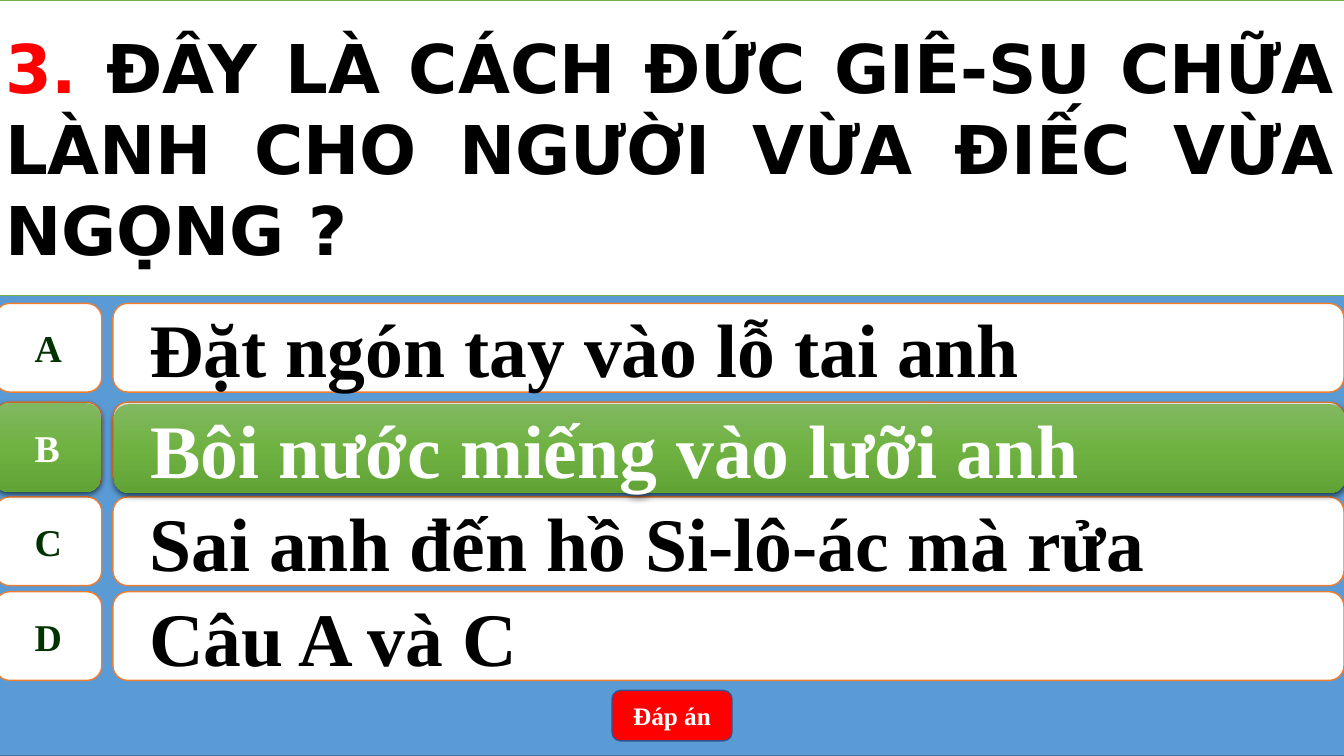
from lxml.etree import SubElement
from pptx import Presentation
from pptx.dml.color import RGBColor
from pptx.enum.shapes import MSO_SHAPE
from pptx.enum.text import MSO_ANCHOR, MSO_AUTO_SIZE, PP_ALIGN
from pptx.oxml.ns import qn
from pptx.util import Inches, Pt


def paint(shape, fill, line):
    shape.shadow.inherit = False
    if line:
        shape.fill.solid()
        shape.fill.fore_color.rgb = RGBColor.from_string(fill)
        shape.line.color.rgb = RGBColor.from_string(line)
        shape.line.width = Pt(1)
        return
    shape.line.fill.background()
    shape.fill.gradient()
    shape.fill.gradient_angle = 270
    properties = shape.element.spPr
    stops = properties.find(qn("a:gradFill")).find(qn("a:gsLst"))
    for stop in list(stops):
        stops.remove(stop)
    for position, color in zip((0, 50000, 100000), fill):
        stop = SubElement(stops, qn("a:gs"), pos=str(position))
        SubElement(stop, qn("a:srgbClr"), val=color)
    shadow = SubElement(properties.find(qn("a:effectLst")), qn("a:outerShdw"),
                        blurRad=str(Pt(4.5)), dist=str(Pt(1.5)), dir="5400000",
                        algn="ctr", rotWithShape="0")
    black = SubElement(shadow, qn("a:srgbClr"), val="000000")
    SubElement(black, qn("a:alpha"), val="63000")


def write(shape, text, size=18, color="000000", font="Times New Roman",
          align=PP_ALIGN.CENTER, wrap=True, hanging=False):
    frame = shape.text_frame
    frame.word_wrap = wrap
    frame.auto_size = MSO_AUTO_SIZE.NONE
    frame.vertical_anchor = MSO_ANCHOR.MIDDLE
    paragraph = frame.paragraphs[0]
    paragraph.alignment = align
    if hanging:
        paragraph.level = 1
        indents = paragraph._p.get_or_add_pPr()
        indents.set("marL", str(Inches(0.5)))
        indents.set("indent", str(Inches(-0.28)))
    run = paragraph.add_run()
    run.text = text
    run.font.name = font
    run.font.size = Pt(size)
    run.font.bold = True
    run.font.color.rgb = RGBColor.from_string(color)


presentation = Presentation()
presentation.slide_width = Inches(13.33)
presentation.slide_height = Inches(7.5)
slide = presentation.slides.add_slide(presentation.slide_layouts[5])

backdrop = slide.shapes.add_shape(
    MSO_SHAPE.RECTANGLE, Inches(-0.05), 0, Inches(13.39), Inches(7.5))
paint(backdrop, "5B9BD5", "43739E")

button = slide.shapes.add_shape(
    MSO_SHAPE.ROUNDED_RECTANGLE, Inches(6.07), Inches(6.85), Inches(1.19), Inches(0.5))
paint(button, "FF0000", "325491")
write(button, "Đáp án", color="FFFFFF")

correct = "Bôi nước miếng vào lưỡi anh"
green = ("81B861", "6FB242", "62A336")
plain = ("FFFFFF", "ED7D31", "003300", "000000")
highlighted = (green, None, "FFFFFF", "FFFFFF")
answers = [
    ("A", "Đặt ngón tay vào lỗ tai anh", -0.05, 1.12, 3.01, 3.01, plain),
    ("B", correct, -0.05, 1.12, 3.99, 3.99, plain),
    ("C", "Sai anh đến hồ Si-lô-ác mà rửa", -0.05, 1.12, 4.93, 4.93, plain),
    ("D", "Câu A và C", -0.05, 1.12, 5.87, 5.87, plain),
    ("B", correct, -0.06, 1.13, 4, 4.01, highlighted),
]
for letter, answer, letter_left, answer_left, letter_top, answer_top, style in answers:
    fill, line, letter_color, answer_color = style
    row = slide.shapes.add_group_shape()
    letter_box = row.shapes.add_shape(
        MSO_SHAPE.FLOWCHART_ALTERNATE_PROCESS,
        Inches(letter_left), Inches(letter_top), Inches(1.06), Inches(0.88))
    paint(letter_box, fill, line)
    write(letter_box, letter, size=27, color=letter_color, wrap=False)
    answer_box = row.shapes.add_shape(
        MSO_SHAPE.ROUNDED_RECTANGLE,
        Inches(answer_left), Inches(answer_top), Inches(12.21), Inches(0.88))
    paint(answer_box, fill, line)
    write(answer_box, answer, size=54, color=answer_color,
          align=PP_ALIGN.LEFT, hanging=True)

question = slide.shapes.title
question.left, question.top = Inches(-0.05), 0
question.width, question.height = Inches(13.39), Inches(2.93)
paint(question, "FFFFFF", "70AD47")
for text, color in (
    ("3. ", "FF0000"),
    ("ĐÂY LÀ CÁCH ĐỨC GIÊ-SU CHỮA LÀNH CHO NGƯỜI VỪA ĐIẾC VỪA NGỌNG ?", "000000"),
):
    write(question, text, size=48, color=color, font="DejaVu Sans", align=PP_ALIGN.JUSTIFY)
slide.shapes._spTree.append(question.element)

presentation.save("out.pptx")
